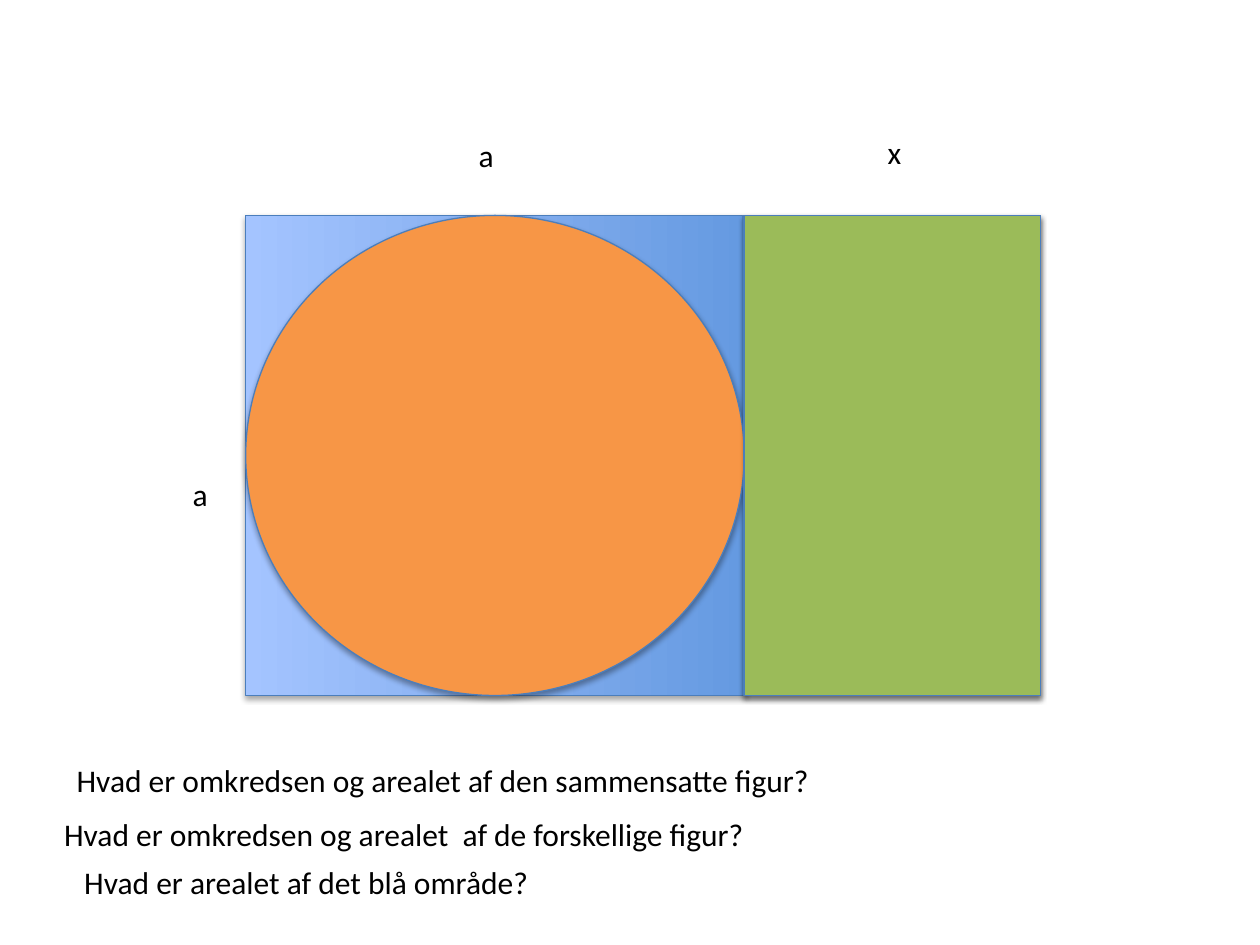
from lxml import etree
from pptx import Presentation
from pptx.dml.color import RGBColor
from pptx.enum.shapes import MSO_CONNECTOR, MSO_SHAPE
from pptx.enum.text import MSO_AUTO_SIZE
from pptx.oxml.ns import qn
from pptx.util import Inches, Pt

RECTANGLE, OVAL = MSO_SHAPE.RECTANGLE, MSO_SHAPE.OVAL
STRAIGHT = MSO_CONNECTOR.STRAIGHT
FIT_TEXT = MSO_AUTO_SIZE.SHAPE_TO_FIT_TEXT

SLIDE_W, SLIDE_H = 10, 7.5
COLORS = {
    "blue_dark": "3F80CE",
    "blue_light": "A4C4FF",
    "orange": "F79646",
    "green": "9BBB59",
    "outline": "4B7EBC",
    "divider": "4F81BD",
    "black": "000000",
}
FONT = {"name": "Calibri", "size": Pt(18)}
LABEL_H = 0.4
SIDE_SHARE = 0.627  # part of the figure's width that is side a

QUESTIONS = [
    (0.51, 5.99, 6.09, "Hvad er omkredsen og arealet af den sammensatte figur?"),
    (0.41, 6.42, 5.69, "Hvad er omkredsen og arealet  af de forskellige figur?"),
    (0.57, 6.8, 3.78, "Hvad er arealet af det blå område?"),
]


def rgb(name):
    return RGBColor.from_string(COLORS[name])


def add_shadow(part, distance, opacity):
    """Give a shape or connector a soft shadow straight below; call after its line is set."""
    effects = etree.SubElement(part._element.spPr, qn("a:effectLst"))
    shadow = etree.SubElement(effects, qn("a:outerShdw"), {
        "blurRad": str(Pt(3.1)), "dist": str(Pt(distance)),
        "dir": "5400000", "rotWithShape": "0"})
    tint = etree.SubElement(shadow, qn("a:srgbClr"), val=COLORS["black"])
    etree.SubElement(tint, qn("a:alpha"), val=str(opacity * 1000))


def add_area(slide, preset, box, color=None):
    """Add an outlined, shadowed area; without a color its fill is left to the caller."""
    area = slide.shapes.add_shape(preset, *map(Inches, box))
    if color:
        area.fill.solid()
        area.fill.fore_color.rgb = rgb(color)
    area.line.color.rgb = rgb("outline")
    area.line.width = Pt(0.75)
    add_shadow(area, 1.8, 35)
    return area


def add_blue_background(slide, box):
    """Fill the box with an upright gradient rectangle turned a quarter to the left."""
    left, top, width, height = box
    turned = (left + (width - height) / 2, top + (height - width) / 2, height, width)
    background = add_area(slide, RECTANGLE, turned)
    background.rotation = 270
    background.fill.gradient()
    background.fill.gradient_angle = 90
    for stop, color in zip(background.fill.gradient_stops, ("blue_dark", "blue_light")):
        stop.color.rgb = rgb(color)


def add_divider(slide, x, top, bottom):
    divider = slide.shapes.add_connector(STRAIGHT, *map(Inches, (x, bottom, x, top)))
    divider.line.color.rgb = rgb("divider")
    divider.line.width = Pt(2)
    add_shadow(divider, 1.6, 38)


def add_label(slide, left, top, width, wording):
    label = slide.shapes.add_textbox(*map(Inches, (left, top, width, LABEL_H)))
    frame = label.text_frame
    frame.word_wrap = False
    frame.auto_size = FIT_TEXT
    run = frame.paragraphs[0].add_run()
    run.text = wording
    for attribute, value in FONT.items():
        setattr(run.font, attribute, value)
    run.font.color.rgb = rgb("black")


def add_figure(slide, box):
    """Draw the square with its circle and the rectangle beside it, with side names."""
    left, top, width, height = box
    side = width * SIDE_SHARE
    split = left + side
    add_blue_background(slide, box)
    add_divider(slide, split, top, top + height)
    add_label(slide, left - 0.52, top + 2.01, 0.32, "a")
    add_label(slide, split + 1.04, top - 0.7, 0.31, "x")
    add_label(slide, left + 1.75, top - 0.68, 0.32, "a")
    add_area(slide, OVAL, (left, top, side, height), "orange")
    add_area(slide, RECTANGLE, (split, top, width - side, height), "green")


def add_questions(slide):
    for question in QUESTIONS:
        add_label(slide, *question)


def main():
    deck = Presentation()
    deck.slide_width, deck.slide_height = Inches(SLIDE_W), Inches(SLIDE_H)
    slide = deck.slides.add_slide(deck.slide_layouts[6])
    add_figure(slide, (0.195 * SLIDE_W, 0.228 * SLIDE_H, 0.631 * SLIDE_W, 0.508 * SLIDE_H))
    add_questions(slide)
    deck.save("out.pptx")


if __name__ == "__main__":
    main()
